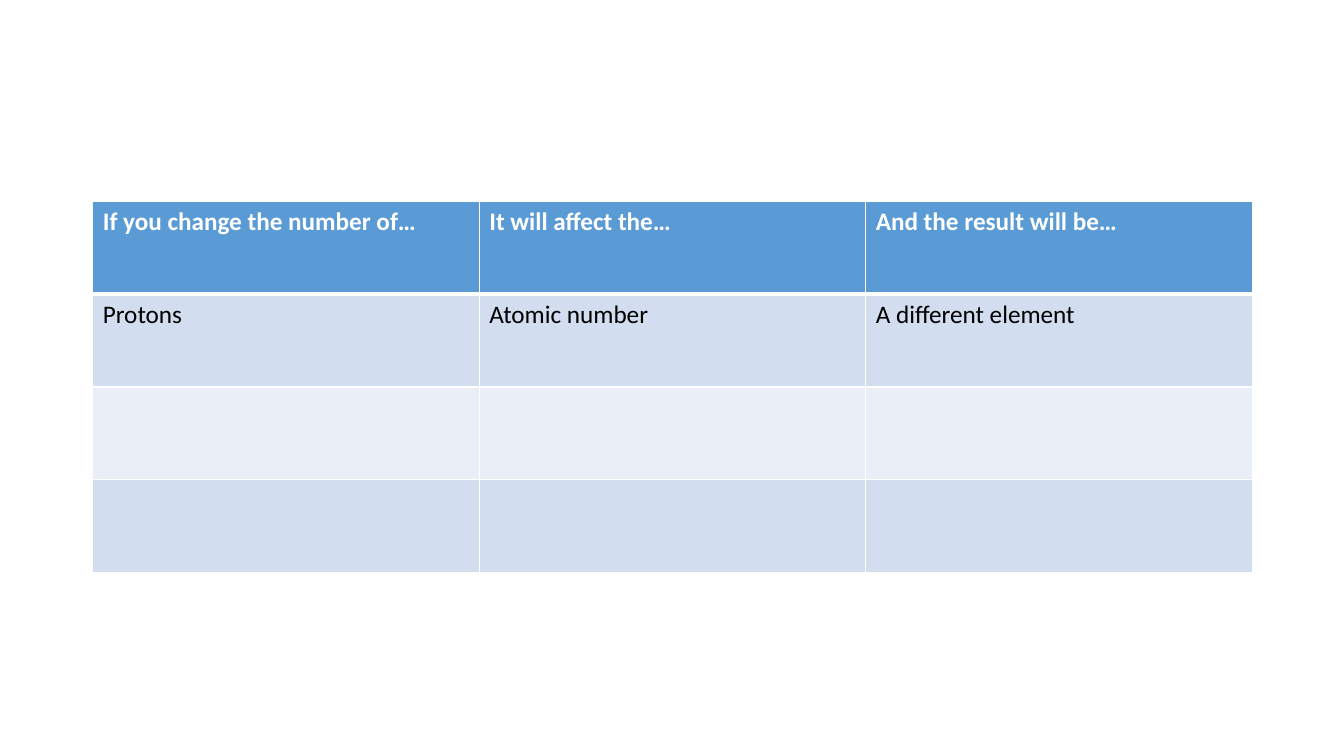
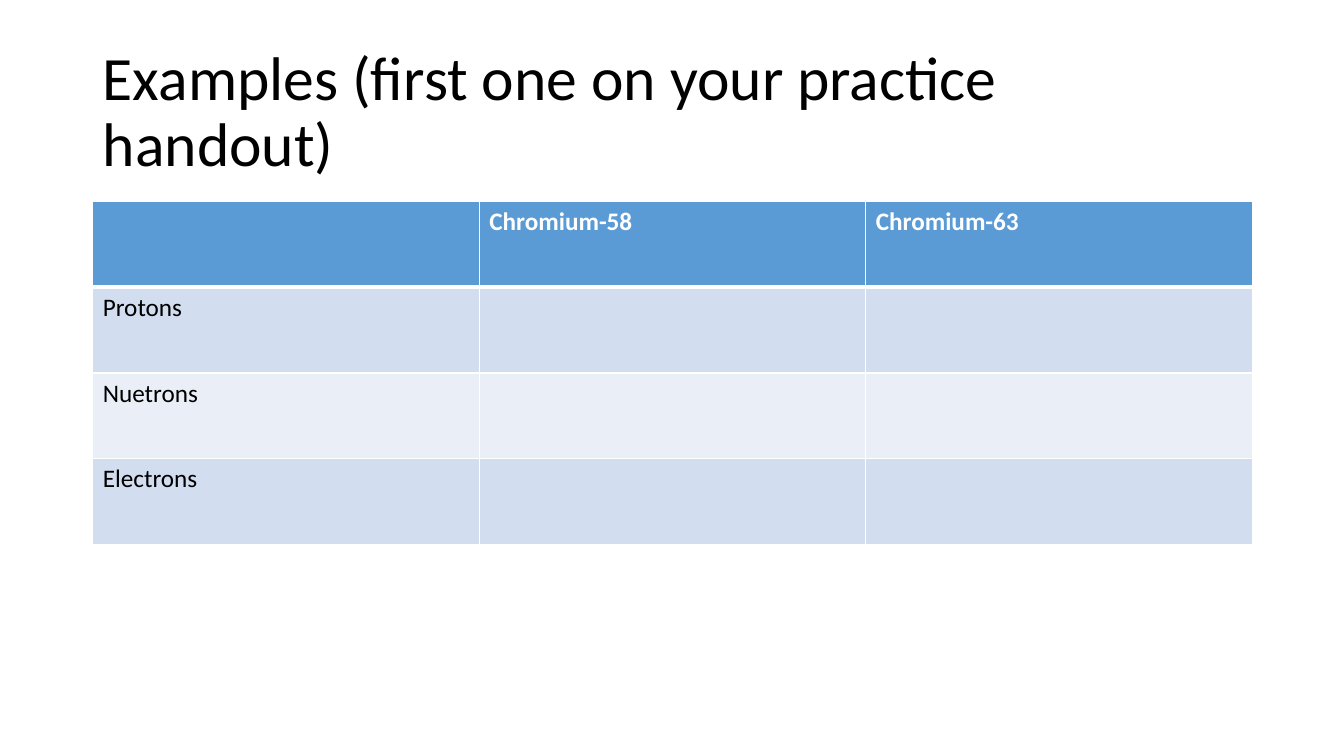
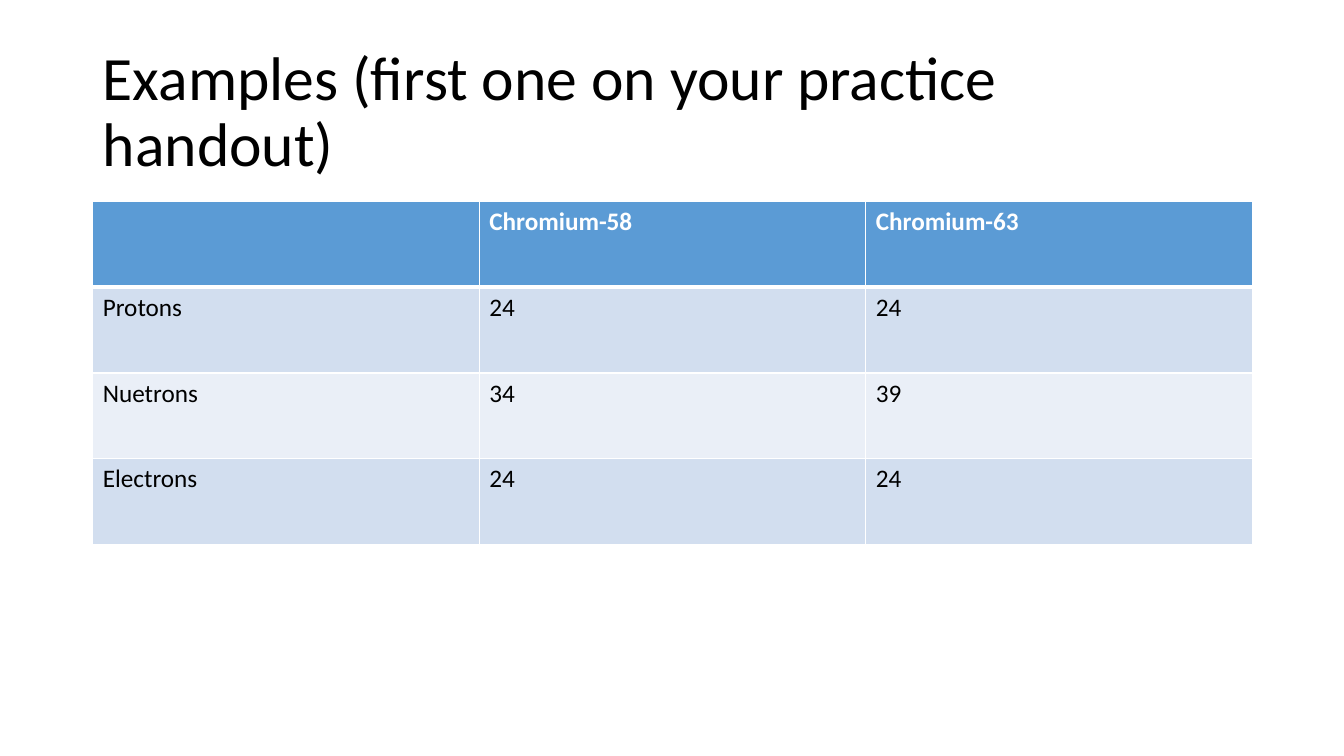
from dataclasses import dataclass

from lxml.etree import SubElement
from pptx import Presentation
from pptx.dml.color import RGBColor
from pptx.enum.text import MSO_ANCHOR, MSO_AUTO_SIZE, PP_ALIGN
from pptx.oxml.ns import qn
from pptx.util import Inches, Pt


@dataclass(frozen=True)
class Theme:
    font: str = "Calibri"
    title_size: int = 44
    table_size: int = 18
    text: str = "000000"
    white: str = "FFFFFF"
    header: str = "5B9BD5"
    bands: tuple = ("D2DEEF", "EAEFF7")
    thin_line: int = 1
    thick_line: int = 3
    left: float = 0.92
    width: float = 11.5


class Deck:
    """Builds slides with a shared title and table style."""

    def __init__(self, theme):
        self.theme = theme
        self.presentation = Presentation()
        self.presentation.slide_width = Inches(13.33)
        self.presentation.slide_height = Inches(7.5)
        self.page = None

    def add_page(self, title=None):
        layout = self.presentation.slide_layouts.get_by_name("Title Only" if title else "Blank")
        self.page = self.presentation.slides.add_slide(layout)
        if title:
            self.title(title)

    def style(self, para, size, color, bold=False):
        para.font.name = self.theme.font
        para.font.size = Pt(size)
        para.font.bold = bold
        para.font.color.rgb = RGBColor.from_string(color)

    def title(self, text):
        box = self.page.shapes.title
        box.left, box.top = Inches(self.theme.left), Inches(0.4)
        box.width, box.height = Inches(self.theme.width), Inches(1.45)
        frame = box.text_frame
        frame.text = text
        frame.word_wrap = True
        frame.auto_size = MSO_AUTO_SIZE.NONE
        frame.vertical_anchor = MSO_ANCHOR.MIDDLE
        para = frame.paragraphs[0]
        para.alignment = PP_ALIGN.LEFT
        para.line_spacing = 0.9
        self.style(para, self.theme.title_size, self.theme.text)

    def borders(self, cell, top, bottom):
        properties = cell._tc.get_or_add_tcPr()
        thin = self.theme.thin_line
        for side, width in (("L", thin), ("R", thin), ("T", top), ("B", bottom)):
            line = SubElement(properties, qn(f"a:ln{side}"), w=str(Pt(width)))
            fill = SubElement(line, qn("a:solidFill"))
            SubElement(fill, qn("a:srgbClr"), val=self.theme.white)

    def cell(self, cell, text, row):
        theme = self.theme
        is_header = row == 0
        self.borders(
            cell,
            top=theme.thick_line if row == 1 else theme.thin_line,
            bottom=theme.thick_line if is_header else theme.thin_line,
        )
        cell.fill.solid()
        color = theme.header if is_header else theme.bands[(row - 1) % len(theme.bands)]
        cell.fill.fore_color.rgb = RGBColor.from_string(color)
        cell.text = text
        self.style(
            cell.text_frame.paragraphs[0],
            theme.table_size,
            theme.white if is_header else theme.text,
            is_header,
        )

    def table(self, rows, row_height):
        table = self.page.shapes.add_table(
            len(rows),
            len(rows[0]),
            Inches(self.theme.left),
            Inches(2),
            Inches(self.theme.width),
            Inches(row_height * len(rows)),
        ).table
        for row, texts in enumerate(rows):
            table.rows[row].height = Inches(row_height)
            for column, text in enumerate(texts):
                self.cell(table.cell(row, column), text, row)

    def save(self):
        self.presentation.save("out.pptx")


def main():
    deck = Deck(Theme())

    deck.add_page()
    blank_row = ("", "", "")
    deck.table(
        [
            ("If you change the number of…", "It will affect the…", "And the result will be…"),
            ("Protons", "Atomic number", "A different element"),
            blank_row,
            blank_row,
        ],
        row_height=0.92,
    )

    particles = ("Protons", "Nuetrons", "Electrons")
    unanswered = [("", "")] * len(particles)
    answers = [("24", "24"), ("34", "39"), ("24", "24")]
    for counts in (unanswered, answers):
        deck.add_page("Examples (first one on your practice handout)")
        body = [(particle, *pair) for particle, pair in zip(particles, counts)]
        deck.table([("", "Chromium-58", "Chromium-63"), *body], row_height=0.85)

    deck.save()


if __name__ == "__main__":
    main()
